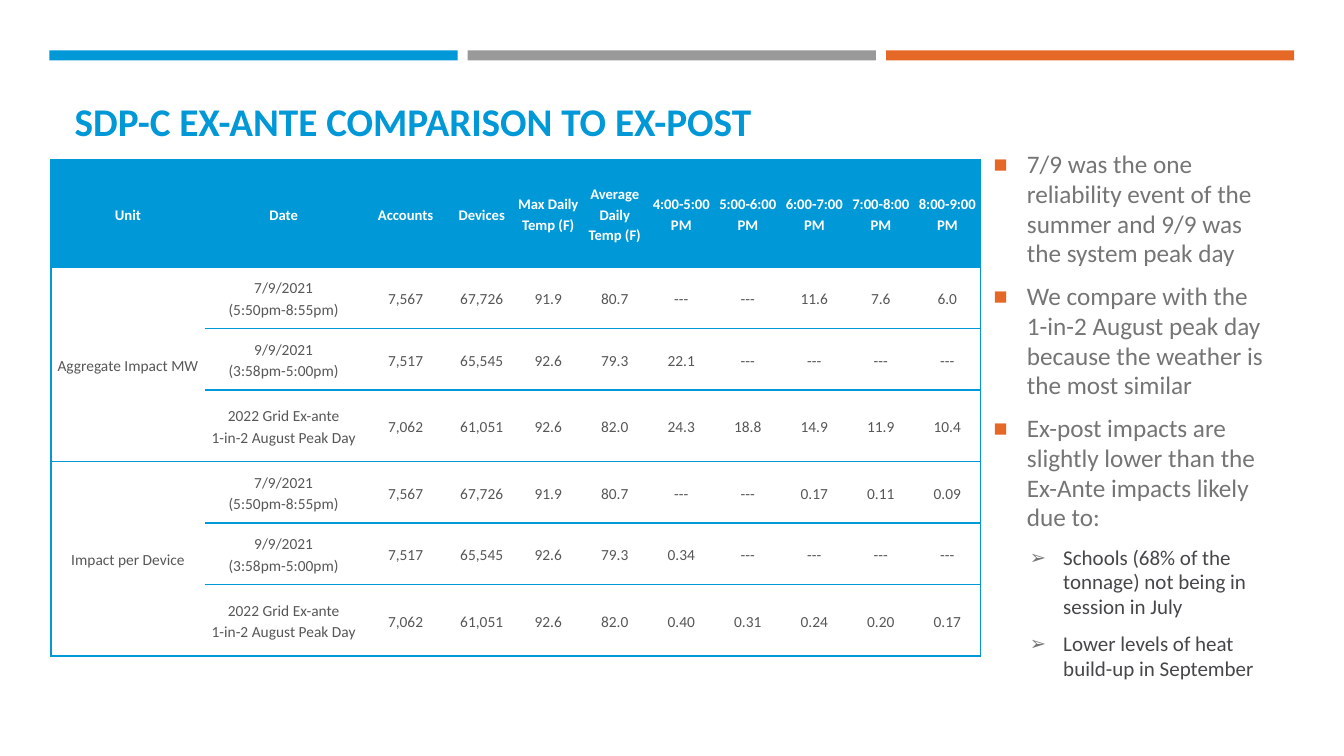
"""Build the slide comparing SDP-C ex-ante and ex-post impacts."""
import dataclasses

import lxml.etree
import pptx
import pptx.dml.color
import pptx.enum.shapes
import pptx.enum.text
import pptx.oxml
import pptx.oxml.ns
import pptx.util

BLUE = pptx.dml.color.RGBColor(0x00, 0x98, 0xD7)
ORANGE = pptx.dml.color.RGBColor(0xE6, 0x68, 0x27)
GRAY = pptx.dml.color.RGBColor(0x99, 0x99, 0x99)
BODY_GRAY = pptx.dml.color.RGBColor(0x75, 0x75, 0x75)
DETAIL_GRAY = pptx.dml.color.RGBColor(0x46, 0x47, 0x49)
CELL_GRAY = pptx.dml.color.RGBColor(0x57, 0x57, 0x57)
WHITE = pptx.dml.color.RGBColor(0xFF, 0xFF, 0xFF)

FONT = "Calibri"
GRID_COLUMNS, GRID_ROWS = 160, 90
NO_TABLE_STYLE = "{2D5ABB26-0587-4C30-8999-92F81FD0307C}"
COLUMN_WIDTHS = (18.24, 18.84, 10.2) + (7.92,) * 8
EVENT_HEIGHTS = (7.32, 7.32, 8.52)
ROW_HEIGHTS = (12.72,) + EVENT_HEIGHTS * 2
NONE = "---"


@dataclasses.dataclass(frozen=True)
class Area:
    """A rectangle in grid columns and rows."""

    left: float
    top: float
    width: float
    height: float

    def lengths(self) -> tuple[pptx.util.Length, ...]:
        """Return the position and size as lengths."""
        return tuple(map(grid, (self.left, self.top, self.width, self.height)))


@dataclasses.dataclass(frozen=True)
class Event:
    """One day with its conditions and hourly impacts for each unit."""

    date: str
    conditions: tuple[str, ...]
    aggregate: tuple[str, ...]
    per_device: tuple[str, ...]


@dataclasses.dataclass(frozen=True)
class Level:
    """The look of one bullet level."""

    symbol: str
    symbol_color: pptx.dml.color.RGBColor
    indent: float
    size: float
    color: pptx.dml.color.RGBColor


@dataclasses.dataclass(frozen=True)
class Finding:
    """One bulleted statement."""

    text: str
    level: Level


TITLE_AREA = Area(7.68, 9.24, 144.72, 8.52)
FINDINGS_AREA = Area(117.12, 17.28, 34.8, 63.12)
TABLE_AREA = Area(6.12, 19.08, sum(COLUMN_WIDTHS), sum(ROW_HEIGHTS))

HEADERS = (
    "Unit", "Date", "Accounts", "Devices", "Max Daily Temp (F)", "Average Daily Temp (F)",
    *(f"{hour}:00-{hour + 1}:00 PM" for hour in range(4, 9)),
)
EVENTS = (
    Event("7/9/2021\n(5:50pm-8:55pm)", ("7,567", "67,726", "91.9", "80.7"),
          (NONE, NONE, "11.6", "7.6", "6.0"), (NONE, NONE, "0.17", "0.11", "0.09")),
    Event("9/9/2021\n(3:58pm-5:00pm)", ("7,517", "65,545", "92.6", "79.3"),
          ("22.1",) + (NONE,) * 4, ("0.34",) + (NONE,) * 4),
    Event("2022 Grid Ex-ante\n1-in-2 August Peak Day", ("7,062", "61,051", "92.6", "82.0"),
          ("24.3", "18.8", "14.9", "11.9", "10.4"), ("0.40", "0.31", "0.24", "0.20", "0.17")),
)
MAIN = Level("■", ORANGE, 0.33, 18, BODY_GRAY)
DETAIL = Level("➢", BODY_GRAY, 0.69, 15, DETAIL_GRAY)
FINDINGS = (
    Finding("7/9 was the one reliability event of the summer and 9/9 was the system peak day", MAIN),
    Finding("We compare with the 1-in-2 August peak day because the weather is the most similar", MAIN),
    Finding("Ex-post impacts are slightly lower than the Ex-Ante impacts likely due to:", MAIN),
    Finding("Schools (68% of the tonnage) not being in session in July", DETAIL),
    Finding("Lower levels of heat build-up in September", DETAIL),
)


def grid(units: float) -> pptx.util.Length:
    """Turn grid units of a twelfth of an inch into a length."""
    return pptx.util.Inches(units / 12)


def style_font(font, size: float, color: pptx.dml.color.RGBColor, bold: bool = False) -> None:
    """Set the typeface, size, colour and weight of a font."""
    font.name, font.size, font.bold = FONT, pptx.util.Pt(size), bold
    font.color.rgb = color


def add_bars(page) -> None:
    """Draw the three coloured bars along the top."""
    for index, color in enumerate((BLUE, GRAY, ORANGE)):
        area = Area(5.88 + index * 49.8, 6, 48.6, 1.2)
        bar = page.shapes.add_shape(pptx.enum.shapes.MSO_SHAPE.RECTANGLE, *area.lengths())
        bar.shadow.inherit = False
        bar.fill.solid()
        bar.fill.fore_color.rgb = color
        bar.line.fill.background()


def add_title(page) -> None:
    """Place and format the title."""
    title = page.shapes.title
    title.left, title.top, title.width, title.height = TITLE_AREA.lengths()
    frame = title.text_frame
    frame.text = "SDP-C EX-ANTE COMPARISON TO EX-POST"
    frame.auto_size = pptx.enum.text.MSO_AUTO_SIZE.NONE
    frame.vertical_anchor = pptx.enum.text.MSO_ANCHOR.BOTTOM
    frame.paragraphs[0].alignment = pptx.enum.text.PP_ALIGN.LEFT
    style_font(frame.paragraphs[0].font, 28, BLUE, True)


def add_bullet(para, level: Level) -> None:
    """Give a paragraph a hanging bullet."""
    properties = para._p.get_or_add_pPr()
    properties.set("marL", str(pptx.util.Inches(level.indent)))
    properties.set("indent", str(pptx.util.Inches(-0.33)))
    color = lxml.etree.SubElement(properties, pptx.oxml.ns.qn("a:buClr"))
    lxml.etree.SubElement(color, pptx.oxml.ns.qn("a:srgbClr"), val=str(level.symbol_color))
    lxml.etree.SubElement(properties, pptx.oxml.ns.qn("a:buSzPct"), val="92000")
    lxml.etree.SubElement(properties, pptx.oxml.ns.qn("a:buFont"), typeface="Arial")
    lxml.etree.SubElement(properties, pptx.oxml.ns.qn("a:buChar"), char=level.symbol)


def add_findings(page) -> None:
    """Write the bulleted findings beside the table."""
    frame = page.shapes.add_textbox(*FINDINGS_AREA.lengths()).text_frame
    frame.word_wrap = True
    for index, finding in enumerate(FINDINGS):
        para = frame.add_paragraph() if index else frame.paragraphs[0]
        para.text = finding.text
        para.level = int(finding.level is DETAIL)
        add_bullet(para, finding.level)
        para.line_spacing = 0.98
        para.space_after = pptx.util.Pt(6)
        if index:
            para.space_before = pptx.util.Pt(finding.level.size * 0.2)
        style_font(para.font, finding.level.size, finding.level.color)


def add_borders(cell, row: int, column: int) -> None:
    """Rule a cell, with heavier lines on the table's outside."""
    last_row, last_column = len(ROW_HEIGHTS) - 1, len(COLUMN_WIDTHS) - 1
    end_row = row + cell.span_height - 1 if cell.is_merge_origin else row
    widths = {}
    if column == 0:
        widths["L"] = 1.5
    if column == last_column:
        widths["R"] = 1.5
    if not cell.is_spanned:
        widths["T"] = 1 if row else 1.5
    if not cell.is_spanned or row % len(EVENTS) == 0:
        widths["B"] = 1.5 if end_row == last_row else 1
    properties = cell._tc.get_or_add_tcPr()
    for index, (side, width) in enumerate(widths.items()):
        border = pptx.oxml.parse_xml(
            f'<a:ln{side} {pptx.oxml.ns.nsdecls("a")} w="{pptx.util.Pt(width)}">'
            f'<a:solidFill><a:srgbClr val="{BLUE}"/></a:solidFill></a:ln{side}>')
        properties.insert(index, border)


def format_cell(cell, text: str, header: bool) -> None:
    """Fill a cell and write its centred text."""
    cell.margin_left = cell.margin_right = pptx.util.Inches(0.03)
    cell.margin_top = cell.margin_bottom = 0
    cell.vertical_anchor = pptx.enum.text.MSO_ANCHOR.MIDDLE
    if header:
        cell.fill.solid()
        cell.fill.fore_color.rgb = BLUE
    else:
        cell.fill.background()
    cell.text_frame.text = text
    for para in cell.text_frame.paragraphs:
        para.alignment = pptx.enum.text.PP_ALIGN.CENTER
        para.line_spacing = 1.15
        style_font(para.font, 10.5 if header else 11, WHITE if header else CELL_GRAY, header)


def add_impact_table(page) -> None:
    """Draw the table of hourly impacts."""
    rows = [HEADERS]
    rows += [("Aggregate Impact MW", event.date, *event.conditions, *event.aggregate) for event in EVENTS]
    rows += [("Impact per Device", event.date, *event.conditions, *event.per_device) for event in EVENTS]
    table = page.shapes.add_table(len(rows), len(HEADERS), *TABLE_AREA.lengths()).table
    table._tbl.tblPr.find(pptx.oxml.ns.qn("a:tableStyleId")).text = NO_TABLE_STYLE
    table.horz_banding = False
    for column, width in zip(table.columns, COLUMN_WIDTHS):
        column.width = grid(width)
    for row, height in zip(table.rows, ROW_HEIGHTS):
        row.height = grid(height)
    for first in range(1, len(rows), len(EVENTS)):
        table.cell(first, 0).merge(table.cell(first + len(EVENTS) - 1, 0))
    for row, texts in enumerate(rows):
        for column, text in enumerate(texts):
            cell = table.cell(row, column)
            format_cell(cell, "" if cell.is_spanned else text, row == 0)
            add_borders(cell, row, column)


def main() -> None:
    """Build and save the deck."""
    deck = pptx.Presentation()
    deck.slide_width, deck.slide_height = grid(GRID_COLUMNS), grid(GRID_ROWS)
    page = deck.slides.add_slide(deck.slide_layouts[5])
    add_bars(page)
    add_title(page)
    add_findings(page)
    add_impact_table(page)
    deck.save("out.pptx")


if __name__ == "__main__":
    main()
